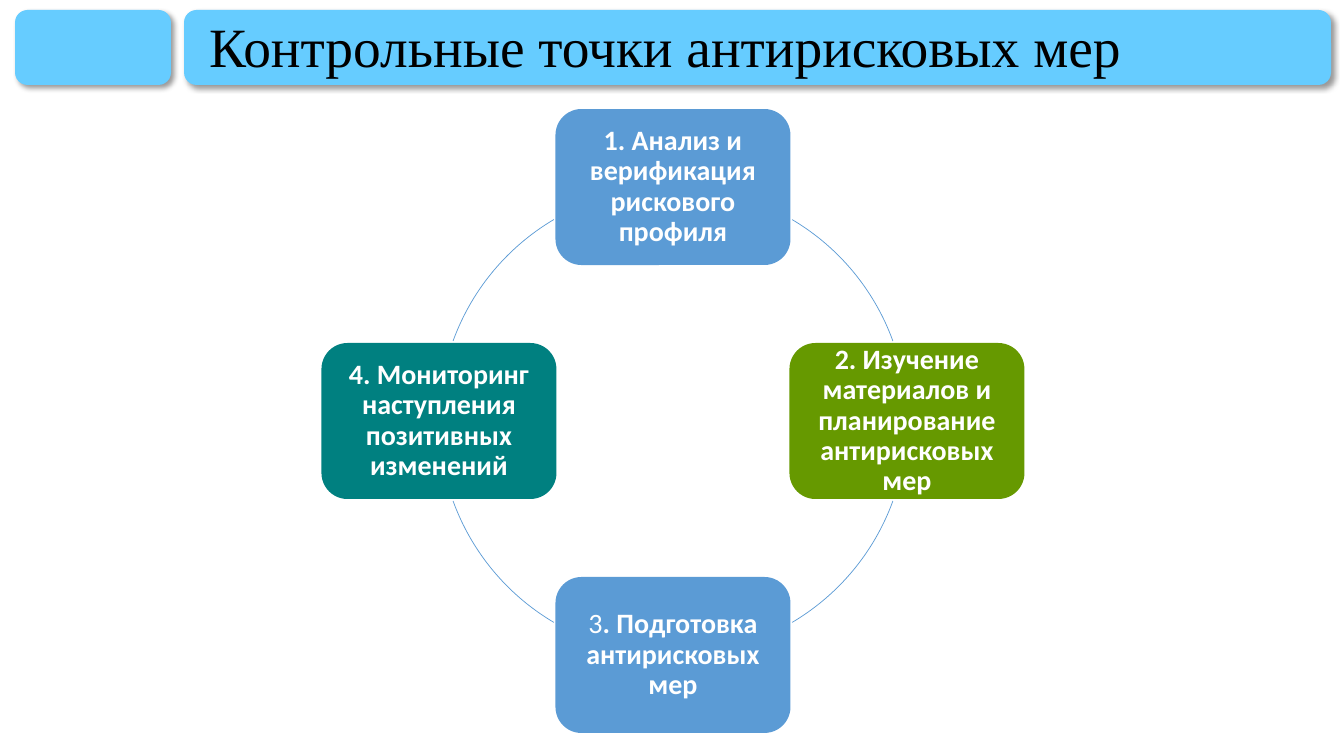
from dataclasses import dataclass

from lxml.etree import SubElement
from pptx import Presentation
from pptx.dml.color import RGBColor
from pptx.enum.shapes import MSO_SHAPE as Preset
from pptx.enum.text import MSO_ANCHOR as Anchor, MSO_AUTO_SIZE as AutoSize, PP_ALIGN as Align
from pptx.oxml.ns import qn
from pptx.util import Emu, Pt

TITLE = "Контрольные точки антирисковых мер"
STEPS = [
    ("blue", [("1. Анализ и верификация рискового профиля", True)]),
    ("green", [("2. Изучение материалов и планирование антирисковых мер", True)]),
    ("blue", [("3", False), (". Подготовка антирисковых мер", True)]),
    ("teal", [("4. Мониторинг наступления позитивных изменений", True)]),
]
DIRECTIONS = [(0, -1), (1, 0), (0, 1), (-1, 0)]
ARC_ANGLES = [(300.6, 340), (20, 59.4), (120.6, 160), (200, 239.4)]

SLIDE_SIZE = (1344, 756)
HEADER_BARS = [(184, 10, 1147, 75), (15, 10, 156, 75)]
TITLE_BOX = (199, 16, 1119, 67)
CENTER_X, CENTER_Y, RADIUS = 673, 421, 234
STEP_WIDTH, STEP_HEIGHT, STEP_MARGIN = 235, 156, 8


@dataclass(frozen=True)
class Theme:
    sky: str = "66CCFF"
    blue: str = "5B9BD5"
    green: str = "669900"
    teal: str = "008080"
    white: str = "FFFFFF"
    black: str = "000000"
    title_font: str = "Times New Roman"
    step_font: str = "Calibri"
    title_size: float = 39.6
    step_size: int = 20
    arc_width: float = 0.5


THEME = Theme()


def px(length):
    return Emu(round(length * 914400 / 100.8))


def add_preset(slide, preset, box, fill=None):
    shape = slide.shapes.add_shape(preset, *map(px, box))
    shape.shadow.inherit = False
    shape.line.fill.background()
    if fill:
        shape.fill.solid()
        shape.fill.fore_color.rgb = RGBColor.from_string(fill)
    else:
        shape.fill.background()
    return shape


def add_run(paragraph, text, font, size, color, bold=False):
    run = paragraph.add_run()
    run.text = text
    run.font.name = font
    run.font.size = Pt(size)
    run.font.bold = bold
    run.font.color.rgb = RGBColor.from_string(color)


def add_shadow(shape):
    effects = shape._element.spPr.find(qn("a:effectLst"))
    shadow = SubElement(effects, qn("a:outerShdw"), blurRad=str(Pt(4)), dist=str(Pt(3)),
                        dir="2700000", algn="tl", rotWithShape="0")
    color = SubElement(shadow, qn("a:srgbClr"), val=THEME.black)
    SubElement(color, qn("a:alpha"), val="40000")


def add_header(slide):
    for box in HEADER_BARS:
        add_shadow(add_preset(slide, Preset.ROUNDED_RECTANGLE, box, THEME.sky))
    title = slide.shapes.title
    title.left, title.top, title.width, title.height = map(px, TITLE_BOX)
    slide.shapes._spTree.append(title._element)
    frame = title.text_frame
    frame.auto_size = AutoSize.NONE
    frame.word_wrap = True
    frame.vertical_anchor = Anchor.MIDDLE
    paragraph = frame.paragraphs[0]
    paragraph.alignment = Align.LEFT
    paragraph.line_spacing = 0.9
    add_run(paragraph, TITLE, THEME.title_font, THEME.title_size, THEME.black)


def add_step(slide, direction, color, runs):
    left = CENTER_X + direction[0] * RADIUS - STEP_WIDTH / 2
    top = CENTER_Y + direction[1] * RADIUS - STEP_HEIGHT / 2
    shape = add_preset(slide, Preset.ROUNDED_RECTANGLE,
                       (left, top, STEP_WIDTH, STEP_HEIGHT), getattr(THEME, color))
    frame = shape.text_frame
    frame.word_wrap = True
    frame.vertical_anchor = Anchor.MIDDLE
    frame.margin_left = frame.margin_right = px(STEP_MARGIN)
    frame.margin_top = frame.margin_bottom = px(STEP_MARGIN)
    paragraph = frame.paragraphs[0]
    paragraph.alignment = Align.CENTER
    paragraph.line_spacing = 0.9
    for text, bold in runs:
        add_run(paragraph, text, THEME.step_font, THEME.step_size, THEME.white, bold)


def add_arc(slide, angles):
    box = (CENTER_X - RADIUS, CENTER_Y - RADIUS, 2 * RADIUS, 2 * RADIUS)
    arc = add_preset(slide, Preset.ARC, box)
    for index, angle in enumerate(angles):
        arc.adjustments[index] = angle * 60000 / 100000
    arc.line.color.rgb = RGBColor.from_string(THEME.blue)
    arc.line.width = Pt(THEME.arc_width)


def main():
    presentation = Presentation()
    presentation.slide_width, presentation.slide_height = map(px, SLIDE_SIZE)
    slide = presentation.slides.add_slide(presentation.slide_layouts[5])
    add_header(slide)
    for direction, angles, (color, runs) in zip(DIRECTIONS, ARC_ANGLES, STEPS):
        add_step(slide, direction, color, runs)
        add_arc(slide, angles)
    presentation.save("out.pptx")


if __name__ == "__main__":
    main()
